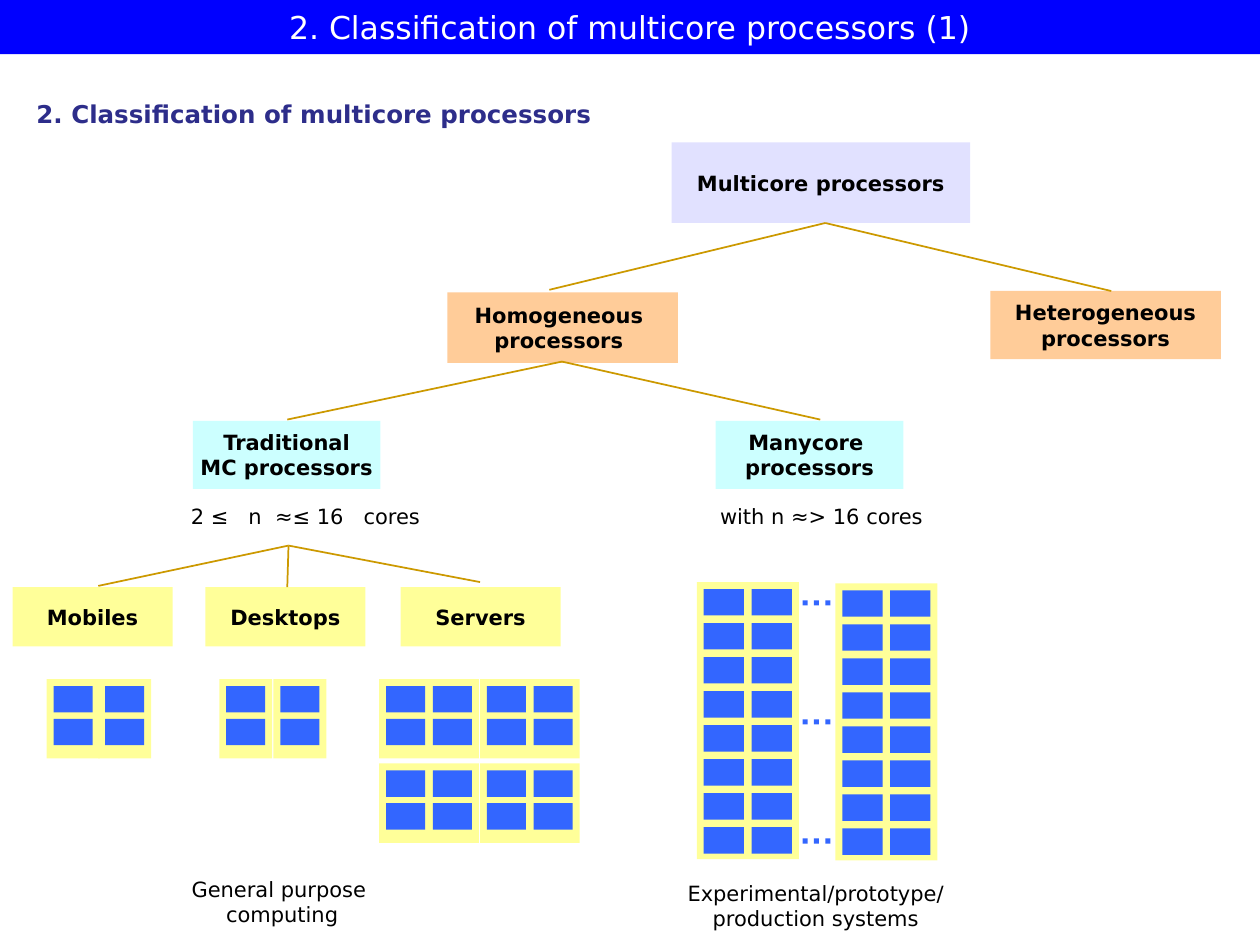
from lxml import etree
from pptx import Presentation
from pptx.dml.color import RGBColor
from pptx.enum.shapes import MSO_CONNECTOR, MSO_SHAPE
from pptx.enum.text import MSO_ANCHOR, MSO_AUTO_SIZE, PP_ALIGN
from pptx.oxml.ns import qn
from pptx.util import Inches, Pt

RECTANGLE = MSO_SHAPE.RECTANGLE
STRAIGHT = MSO_CONNECTOR.STRAIGHT
MIDDLE = MSO_ANCHOR.MIDDLE
TOP = MSO_ANCHOR.TOP
CENTER = PP_ALIGN.CENTER
LEFT = PP_ALIGN.LEFT
FIXED = MSO_AUTO_SIZE.NONE

FONT = "DejaVu Sans"
LILAC, ORANGE, CYAN, YELLOW = "E1E1FF", "FFCC99", "CCFFFF", "FFFF99"
CORE_BLUE, BRANCH_GOLD = "3366FF", "CC9900"


def color(hex_string):
    """Turn a hex string into a colour."""
    return RGBColor.from_string(hex_string)


def inches(box):
    """Convert a box of numbers to lengths."""
    return [Inches(value) for value in box]


def write_text(shape, text, size=12, ink="000000", bold=False,
               align=CENTER, anchor=MIDDLE, wrap=False):
    """Write formatted text into a shape."""
    frame = shape.text_frame
    frame.text = text
    frame.auto_size = FIXED
    frame.word_wrap = wrap
    frame.vertical_anchor = anchor
    for para in frame.paragraphs:
        para.alignment = align
        for span in para.runs:
            span.font.name = FONT
            span.font.size = Pt(size)
            span.font.bold = bold
            span.font.color.rgb = color(ink)


def add_block(shapes, box, fill):
    """Add a flat filled rectangle."""
    block = shapes.add_shape(RECTANGLE, *inches(box))
    block.shadow.inherit = False
    block.fill.solid()
    block.fill.fore_color.rgb = color(fill)
    block.line.fill.background()
    return block


def add_label(page, box, text, **text_format):
    """Add plain text in a box."""
    label = page.shapes.add_textbox(*inches(box))
    write_text(label, text, anchor=TOP, **text_format)


def add_branches(page, start, ends):
    """Draw lines from a parent point to each child point."""
    for end in ends:
        branch = page.shapes.add_connector(STRAIGHT, *inches(start + end))
        branch.line.color.rgb = color(BRANCH_GOLD)
        branch.line.width = Pt(1)
        etree.SubElement(branch._element.spPr, qn("a:effectLst"))


def add_die(shapes, box, columns, rows, core, pitch):
    """Fill a die with a grid of cores."""
    left, top = box[:2]
    add_block(shapes, box, YELLOW)
    for column in range(columns):
        for row in range(rows):
            place = (left + 0.055 + column * pitch[0], top + 0.055 + row * pitch[1])
            add_block(shapes, place + core, CORE_BLUE)


def add_package(page, left, top, grid, gap, die_size, **cores):
    """Group a grid of dies into one processor."""
    package = page.shapes.add_group_shape()
    for column in range(grid[0]):
        for row in range(grid[1]):
            place = (left + column * gap[0], top + row * gap[1])
            add_die(package.shapes, place + die_size, **cores)


def add_title(page, box, text):
    """Turn the title placeholder into the top banner."""
    title = page.shapes.title
    title.left, title.top, title.width, title.height = inches(box)
    title.fill.solid()
    title.fill.fore_color.rgb = color("0000FF")
    write_text(title, text, size=18, ink="FFFFFF", wrap=True)


def add_tree(page):
    """Draw the classification tree."""
    nodes = [
        ((5.33, 1.13, 2.37, 0.64), LILAC, "Multicore processors"),
        ((3.55, 2.32, 1.83, 0.56), ORANGE, "Homogeneous \vprocessors "),
        ((7.86, 2.31, 1.83, 0.54), ORANGE, "Heterogeneous\nprocessors"),
        ((1.53, 3.34, 1.49, 0.54), CYAN, "Traditional\nMC processors"),
        ((5.68, 3.34, 1.49, 0.54), CYAN, "Manycore \vprocessors"),
        ((0.1, 4.66, 1.27, 0.47), YELLOW, "Mobiles"),
        ((1.63, 4.66, 1.27, 0.47), YELLOW, "Desktops"),
        ((3.18, 4.66, 1.27, 0.47), YELLOW, "Servers"),
    ]
    for box, fill, text in nodes:
        write_text(add_block(page.shapes, box, fill), text, bold=True)
    add_branches(page, (6.55, 1.77), [(4.36, 2.3), (8.82, 2.31)])
    add_branches(page, (4.46, 2.87), [(2.28, 3.33), (6.51, 3.33)])
    add_branches(page, (2.29, 4.33), [(0.78, 4.65), (2.28, 4.66), (3.81, 4.62)])


def add_traditional(page, top):
    """Draw the mobile, desktop and server processors."""
    small = dict(rows=2, core=(0.31, 0.21), pitch=(0.37, 0.26))
    for left, gap in ((0.37, 0.41), (1.74, 0.43)):
        add_package(page, left, top, (2, 1), (gap, 0), (0.42, 0.63), columns=1, **small)
    add_package(page, 3.01, top, (2, 2), (0.8, 0.67), (0.79, 0.63), columns=2, **small)


def add_manycore(page, left, top):
    """Draw two many-core dies joined by rows of dots."""
    for offset, shift in ((0, 0), (1.1, 0.01)):
        add_package(page, left + offset, top + shift, (1, 1), (0, 0), (0.81, 2.2),
                    columns=2, rows=8, core=(0.32, 0.21), pitch=(0.38, 0.27))
    for row in range(3):
        for dot in range(3):
            box = (left + 0.84 + dot * 0.09, top + 0.145 + row * 0.945, 0.04, 0.04)
            add_block(page.shapes, box, CORE_BLUE)


def main():
    """Build and save the deck."""
    deck = Presentation()
    deck.slide_width, deck.slide_height = Inches(10), Inches(7.5)
    page = deck.slides.add_slide(deck.slide_layouts[5])
    add_title(page, (0, 0, 10, 0.43), "2. Classification of multicore processors (1)")
    add_label(page, (0.19, 0.74, 4.61, 0.34), "2. Classification of multicore processors",
              size=14, ink="2D2D8A", bold=True, align=LEFT)
    add_tree(page)
    add_traditional(page, 5.39)
    add_manycore(page, 5.53, 4.62)
    add_label(page, (1.35, 3.95, 2.15, 0.3), "2 ≤   n  ≈≤ 16   cores")
    add_label(page, (5.6, 3.95, 1.84, 0.3), "with n ≈> 16 cores")
    add_label(page, (1.42, 6.91, 1.64, 0.5), "General purpose \vcomputing")
    add_label(page, (5.31, 6.94, 2.33, 0.5), "Experimental/prototype/\nproduction systems")
    deck.save("out.pptx")


if __name__ == "__main__":
    main()
